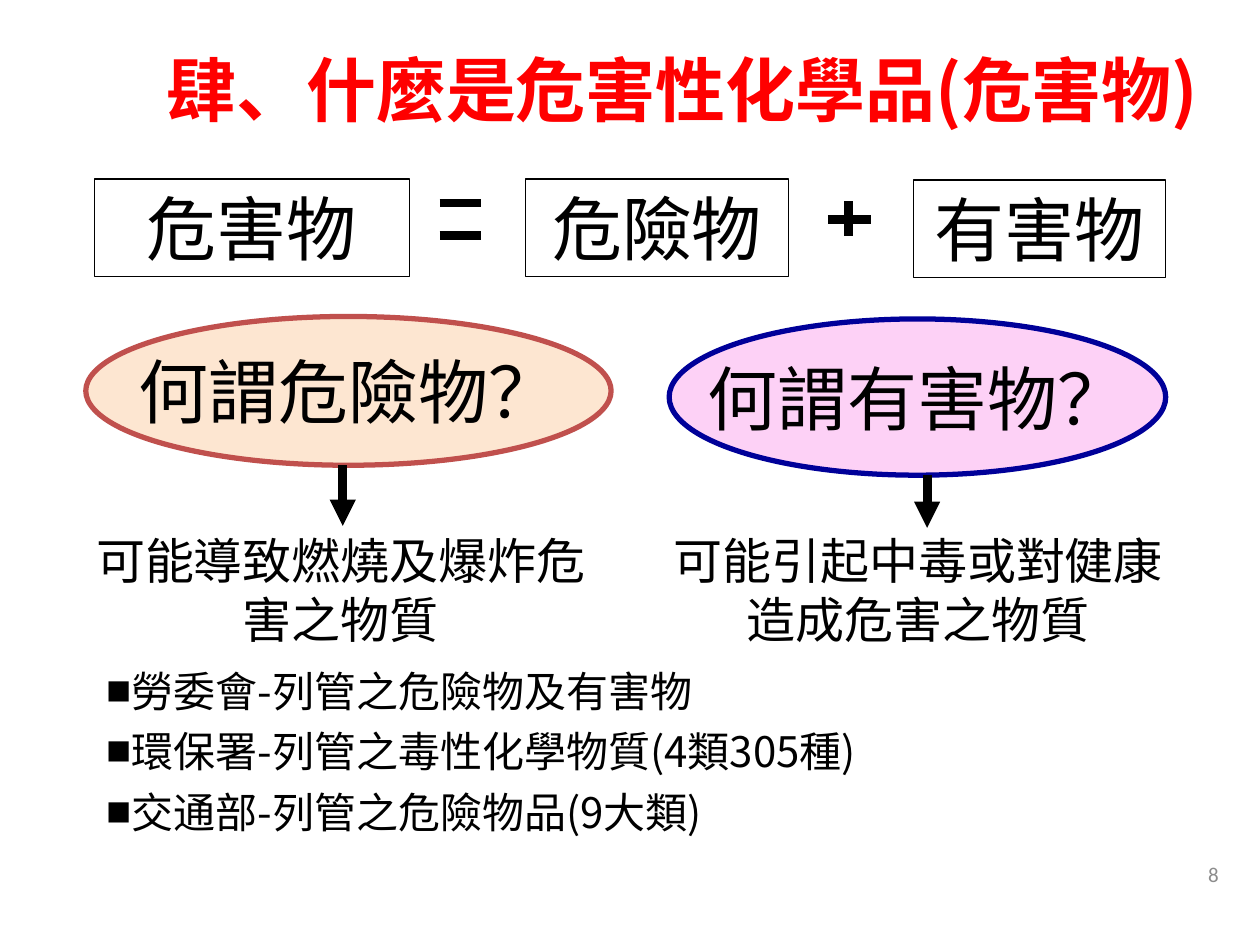
from dataclasses import dataclass

from lxml.etree import SubElement
from pptx import Presentation
from pptx.dml.color import RGBColor
from pptx.enum.shapes import MSO_CONNECTOR, MSO_SHAPE
from pptx.enum.text import MSO_ANCHOR, PP_ALIGN
from pptx.oxml.ns import qn
from pptx.util import Cm, Pt


@dataclass(frozen=True)
class Theme:
    """Colours, fonts and point sizes of the slide."""
    ink: str = "000000"
    heading: str = "FF0000"
    page: str = "8C8C8C"
    danger_fill: str = "FDE6D1"
    danger_edge: str = "C0504D"
    harm_fill: str = "FDD1F6"
    harm_edge: str = "000099"
    font: str = "Noto Sans CJK SC"
    page_font: str = "Calibri"
    large: int = 40
    medium: int = 28
    small: int = 24
    tiny: int = 12
    thin: float = 0.75
    edge: int = 3
    heavy: int = 5


THEME = Theme()


def add_bullet(paragraph):
    """Put a small square bullet before a paragraph."""
    props = paragraph._p.get_or_add_pPr()
    colour = SubElement(props, qn("a:buClr"))
    SubElement(colour, qn("a:srgbClr"), val=THEME.ink)
    SubElement(props, qn("a:buSzPct"), val="60000")
    SubElement(props, qn("a:buFont"), typeface=THEME.font)
    SubElement(props, qn("a:buChar"), char="■")


def write(frame, *lines, size=THEME.large, color=THEME.ink, font=THEME.font, bold=False,
          align=PP_ALIGN.CENTER, anchor=MSO_ANCHOR.TOP, wrap=True, bullet=False, spacing=None):
    """Fill a text frame with one formatted paragraph per line."""
    frame.word_wrap = wrap
    frame.vertical_anchor = anchor
    for index, line in enumerate(lines):
        paragraph = frame.add_paragraph() if index else frame.paragraphs[0]
        if bullet:
            add_bullet(paragraph)
        paragraph.alignment = align
        paragraph.line_spacing = spacing
        run = paragraph.add_run()
        run.text = line
        run.font.size = Pt(size)
        run.font.bold = bold
        run.font.color.rgb = RGBColor.from_string(color)
        run.font.name = font
        props = run._r.get_or_add_rPr()
        east_asian = SubElement(props, qn("a:ea"), typeface=font)
        props.find(qn("a:latin")).addnext(east_asian)


def add_text(slide, box, *lines, **style):
    """Add a text box at a (left, top, width, height) in centimetres."""
    write(slide.shapes.add_textbox(*map(Cm, box)).text_frame, *lines, **style)


def add_panel(slide, kind, box, text, edge, weight, fill=None, **style):
    """Add an outlined shape with a centred term."""
    panel = slide.shapes.add_shape(kind, *map(Cm, box))
    panel.shadow.inherit = False
    if fill:
        panel.fill.solid()
        panel.fill.fore_color.rgb = RGBColor.from_string(fill)
    else:
        panel.fill.background()
    panel.line.color.rgb = RGBColor.from_string(edge)
    panel.line.width = Pt(weight)
    write(panel.text_frame, text, **style)


def add_stroke(slide, start, end, arrow=False):
    """Draw a heavy line, with an arrowhead at its end if asked."""
    stroke = slide.shapes.add_connector(MSO_CONNECTOR.STRAIGHT, *map(Cm, start + end))
    stroke.line.color.rgb = RGBColor.from_string(THEME.ink)
    stroke.line.width = Pt(THEME.heavy)
    if arrow:
        SubElement(stroke.line._get_or_add_ln(), qn("a:tailEnd"), type="triangle")
    SubElement(stroke._element.spPr, qn("a:effectLst"))


def add_equation(slide):
    """Write hazard = danger + harm as boxes and drawn signs."""
    terms = (("危害物", 1.9, 3.61, 6.35), ("危險物", 10.59, 3.61, 5.31), ("有害物", 18.42, 3.63, 5.08))
    for term, left, top, width in terms:
        add_panel(slide, MSO_SHAPE.RECTANGLE, (left, top, width, 1.96), term, THEME.ink, THEME.thin)
    for bar in (4.09, 4.75):
        add_stroke(slide, (8.86, bar), (9.7, bar))
    add_stroke(slide, (16.69, 4.42), (17.55, 4.42))
    add_stroke(slide, (17.1, 4.06), (17.1, 4.75))


def add_definition(slide, question, oval, fill, edge, arrow_x, arrow_end, answer, answer_left):
    """Ask a question in an oval and point down to its answer."""
    add_panel(slide, MSO_SHAPE.OVAL, oval, question, edge, THEME.edge, fill,
              anchor=MSO_ANCHOR.MIDDLE, wrap=False)
    add_stroke(slide, (arrow_x, oval[1] + oval[3]), (arrow_x, arrow_end), arrow=True)
    add_text(slide, (answer_left, 10.57, 10.8, 2.64), answer, size=THEME.medium)


def main():
    """Build and save the slide."""
    deck = Presentation()
    deck.slide_width, deck.slide_height = Cm(25.4), Cm(19.05)
    slide = deck.slides.add_slide(deck.slide_layouts[6])
    add_text(slide, (1.6, 0.2, 24.31, 3.18), "肆、什麼是危害性化學品(危害物)",
             color=THEME.heading, bold=True, anchor=MSO_ANCHOR.MIDDLE)
    add_equation(slide)
    add_definition(slide, "何謂危險物？", (1.73, 6.38, 10.59, 3), THEME.danger_fill,
                   THEME.danger_edge, 6.91, 10.6, "可能導致燃燒及爆炸危害之物質", 1.47)
    add_definition(slide, "何謂有害物？", (13.49, 6.43, 10.01, 3.15), THEME.harm_fill,
                   THEME.harm_edge, 18.69, 10.64, "可能引起中毒或對健康造成危害之物質", 13.11)
    add_text(slide, (1.9, 13.08, 22.81, 3.84), "勞委會-列管之危險物及有害物",
             "環保署-列管之毒性化學物質(4類305種)", "交通部-列管之危險物品(9大類)",
             size=THEME.small, align=PP_ALIGN.LEFT, bullet=True, spacing=1.2)
    add_text(slide, (18.9, 17.12, 5.92, 1.02), "8", size=THEME.tiny, color=THEME.page,
             font=THEME.page_font, align=PP_ALIGN.RIGHT, anchor=MSO_ANCHOR.MIDDLE)
    deck.save("out.pptx")


if __name__ == "__main__":
    main()
